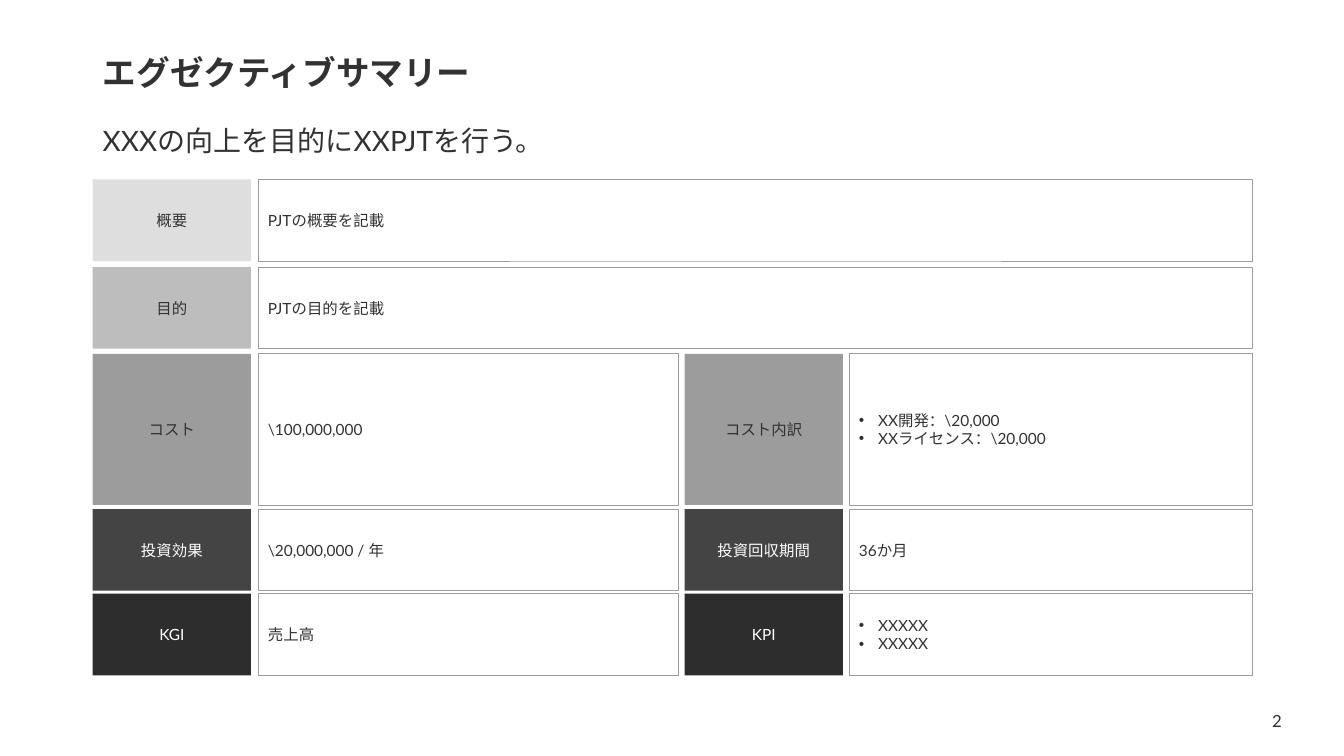
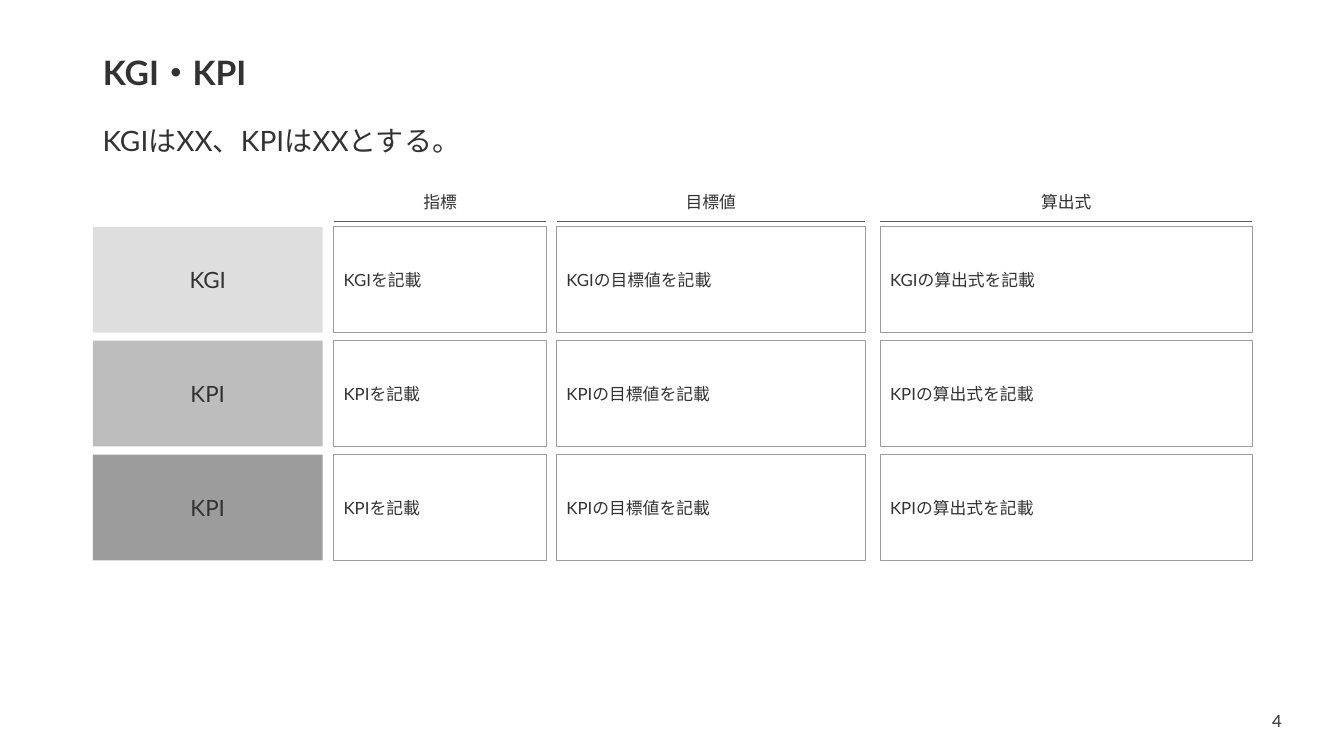
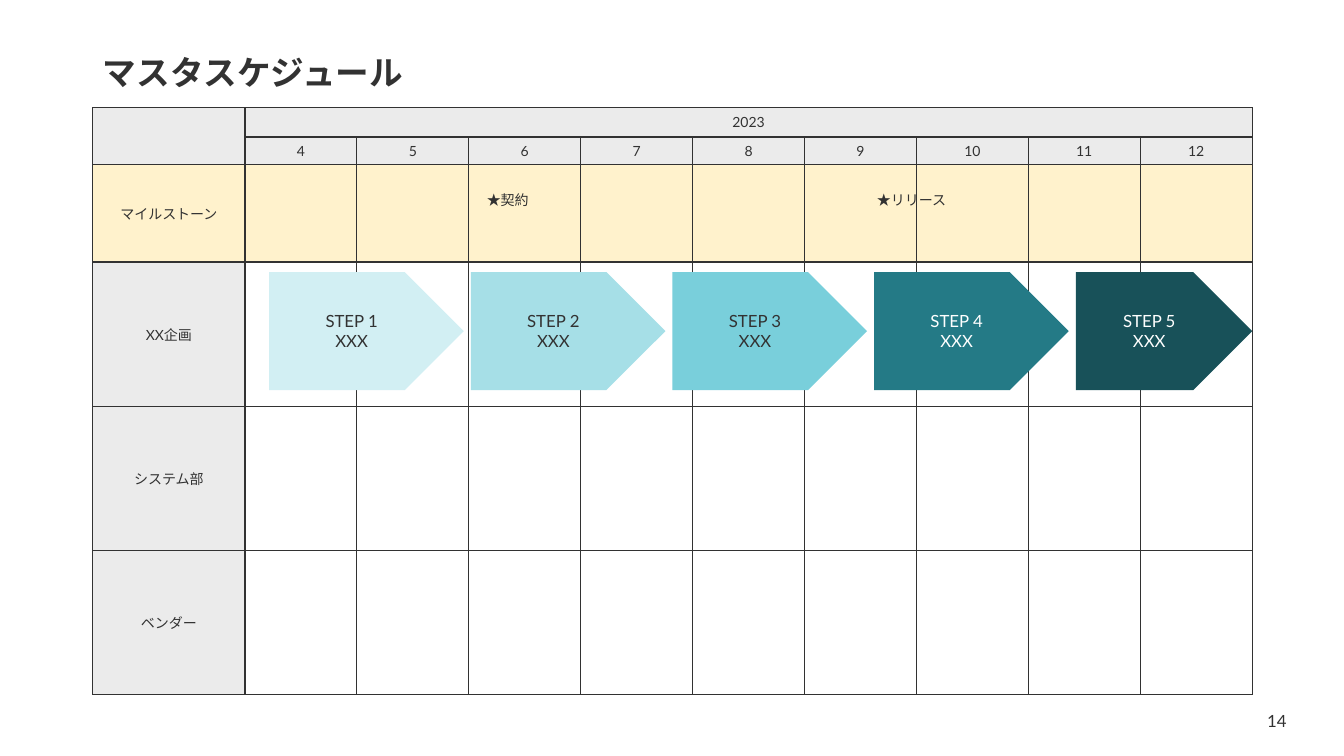
"""Builds three project-planning slides: summary, indicators and master schedule."""
from lxml.etree import SubElement
from pptx import Presentation
from pptx.dml.color import RGBColor
from pptx.enum.shapes import MSO_CONNECTOR, MSO_SHAPE
from pptx.enum.text import MSO_ANCHOR, MSO_AUTO_SIZE, PP_ALIGN
from pptx.oxml.ns import qn
from pptx.util import Pt

PX = 9144
FONT = "Lato"
LEFT, WIDTH = 92, 1150

INK = RGBColor(0x32, 0x32, 0x32)
WHITE = RGBColor(0xFF, 0xFF, 0xFF)
RULE = RGBColor(0x5A, 0x5A, 0x5A)
SILVER = RGBColor(0xDE, 0xDE, 0xDE)
GRAY = RGBColor(0xBD, 0xBD, 0xBD)
STONE = RGBColor(0x9C, 0x9C, 0x9C)
CHARCOAL = RGBColor(0x44, 0x44, 0x44)
BLACK = RGBColor(0x2D, 0x2D, 0x2D)
HEADER = RGBColor(0xEB, 0xEB, 0xEB)
CREAM = RGBColor(0xFF, 0xF2, 0xCC)
TEALS = (
    RGBColor(0xD2, 0xEF, 0xF3),
    RGBColor(0xA6, 0xDF, 0xE7),
    RGBColor(0x79, 0xCF, 0xDB),
    RGBColor(0x24, 0x7A, 0x86),
    RGBColor(0x18, 0x51, 0x59),
)


def emu(*lengths):
    return [length * PX for length in lengths]


class Deck:
    def __init__(self):
        self.presentation = Presentation()
        self.presentation.slide_width, self.presentation.slide_height = emu(1333, 750)
        self.slide = None

    def set_text(self, frame, text, size, color=INK, align=PP_ALIGN.LEFT, bold=False):
        frame.text = text
        frame.word_wrap = True
        frame.vertical_anchor = MSO_ANCHOR.MIDDLE
        for paragraph in frame.paragraphs:
            paragraph.alignment = align
            for run in paragraph.runs:
                run.font.name = FONT
                run.font.size = Pt(size)
                run.font.bold = bold
                run.font.color.rgb = color

    def add_slide(self, title, number, message=None):
        layout = self.presentation.slide_layouts[5]
        self.slide = self.presentation.slides.add_slide(layout)
        placeholder = self.slide.shapes.title
        placeholder.left, placeholder.top, placeholder.width, placeholder.height = emu(
            LEFT, 40, WIDTH, 67)
        frame = placeholder.text_frame
        self.set_text(frame, title, 24, bold=True)
        frame.auto_size = MSO_AUTO_SIZE.NONE
        frame.paragraphs[0].line_spacing = 0.9
        self.text(1242, 695, 49, 40, number, 12, PP_ALIGN.CENTER)
        if message:
            paragraph = self.text(LEFT, 108, WIDTH, 67, message, 20).paragraphs[0]
            paragraph.line_spacing = 0.9
            paragraph.space_before = Pt(10)

    def text(self, left, top, width, height, text, size, align=PP_ALIGN.LEFT):
        shape = self.slide.shapes.add_textbox(*emu(left, top, width, height))
        self.set_text(shape.text_frame, text, size, align=align)
        return shape.text_frame

    def shape(self, kind, left, top, width, height, text, size, align, color=INK):
        shape = self.slide.shapes.add_shape(kind, *emu(left, top, width, height))
        shape.shadow.inherit = False
        self.set_text(shape.text_frame, text, size, color, align)
        return shape

    def label(self, left, top, width, height, text, size, fill, color=INK,
              kind=MSO_SHAPE.RECTANGLE):
        shape = self.shape(kind, left, top, width, height, text, size,
                           PP_ALIGN.CENTER, color)
        shape.fill.solid()
        shape.fill.fore_color.rgb = fill
        shape.line.fill.background()

    def box(self, left, top, width, height, text, size):
        shape = self.shape(MSO_SHAPE.RECTANGLE, left, top, width, height, text, size,
                           PP_ALIGN.LEFT)
        shape.fill.background()
        shape.line.color.rgb = STONE
        shape.line.width = Pt(0.5)
        if "\n" in text:
            self.bullets(shape.text_frame)

    def bullets(self, frame):
        for paragraph in frame.paragraphs:
            properties = paragraph._p.get_or_add_pPr()
            properties.set("marL", str(19 * PX))
            properties.set("indent", str(-19 * PX))
            SubElement(properties, qn("a:buFont"), typeface="Arial")
            SubElement(properties, qn("a:buChar"), char="•")

    def column_header(self, left, width, text):
        self.text(left, 185, width, 30, text, 12, PP_ALIGN.CENTER)
        connector = self.slide.shapes.add_connector(
            MSO_CONNECTOR.STRAIGHT, *emu(left, 220, left + width, 220))
        connector.line.color.rgb = RULE
        connector.line.width = Pt(0.5)
        SubElement(connector._element.spPr, qn("a:effectLst"))

    def table(self, left, top, widths, heights):
        frame = self.slide.shapes.add_table(
            len(heights), len(widths), *emu(left, top, sum(widths), sum(heights)))
        table = frame.table
        table.first_row = table.horz_banding = False
        for column, width in zip(table.columns, emu(*widths)):
            column.width = width
        for row, height in zip(table.rows, emu(*heights)):
            row.height = height
        return table

    def cell(self, cell, text, fill=None):
        self.set_text(cell.text_frame, text, 10, align=PP_ALIGN.CENTER)
        cell.vertical_anchor = MSO_ANCHOR.MIDDLE
        if not text:
            SubElement(cell.text_frame.paragraphs[0]._p, qn("a:endParaRPr"), sz="1000")
        properties = cell._tc.get_or_add_tcPr()
        for side in ("lnL", "lnR", "lnT", "lnB"):
            border = SubElement(properties, qn(f"a:{side}"), w=str(int(Pt(1))))
            solid = SubElement(border, qn("a:solidFill"))
            SubElement(solid, qn("a:srgbClr"), val=str(INK))
        if fill is None:
            cell.fill.background()
        else:
            cell.fill.solid()
            cell.fill.fore_color.rgb = fill


def add_summary(deck):
    deck.add_slide("エグゼクティブサマリー", "2", "XXXの向上を目的にXXPJTを行う。")
    rows = (
        (178, 81, SILVER, INK, (("概要", "PJTの概要を記載"),)),
        (265, 81, GRAY, INK, (("目的", "PJTの目的を記載"),)),
        (351, 150, STONE, INK, (("コスト", "\\100,000,000"),
                                ("コスト内訳", "XX開発：\\20,000\nXXライセンス：\\20,000"))),
        (505, 81, CHARCOAL, WHITE, (("投資効果", "\\20,000,000 / 年"),
                                    ("投資回収期間", "36か月"))),
        (589, 81, BLACK, WHITE, (("KGI", "売上高"), ("KPI", "XXXXX\nXXXXX"))),
    )
    pair_columns = ((LEFT, 256, 417), (679, 842, 400))
    wide_columns = ((LEFT, 256, 986),)
    for top, height, fill, color, entries in rows:
        columns = pair_columns if len(entries) == 2 else wide_columns
        for (label_left, box_left, box_width), (label, text) in zip(columns, entries):
            deck.label(label_left, top, 157, height, label, 11, fill, color)
            deck.box(box_left, top, box_width, height, text, 11)


def add_indicators(deck):
    deck.add_slide("KGI・KPI", "4", "KGIはXX、KPIはXXとする。")
    columns = (
        (331, 211, "指標", ""),
        (552, 306, "目標値", "の目標値"),
        (873, 369, "算出式", "の算出式"),
    )
    for left, width, header, _ in columns:
        deck.column_header(left, width, header)
    for row, (name, fill) in enumerate((("KGI", SILVER), ("KPI", GRAY), ("KPI", STONE))):
        top = 225 + 113 * row
        deck.label(LEFT, top, 228, 105, name, 16, fill)
        for left, width, _, subject in columns:
            deck.box(left, top, width, 105, f"{name}{subject}を記載", 12)


def add_schedule(deck):
    deck.add_slide("マスタスケジュール", "14")
    months = [str(month) for month in range(4, 13)]
    blank = [""] * len(months)
    rows = (
        (["", "2023"] + blank[1:], HEADER, HEADER),
        ([""] + months, HEADER, HEADER),
        (["マイルストーン"] + blank, CREAM, CREAM),
        (["XX企画"] + blank, HEADER, None),
        (["システム部"] + blank, HEADER, None),
        (["ベンダー"] + blank, HEADER, None),
    )
    table = deck.table(LEFT, 107, [151] + [111] * 9, [29, 27, 97, 143, 143, 143])
    for row, (texts, first_fill, fill) in enumerate(rows):
        for column, text in enumerate(texts):
            deck.cell(table.cell(row, column), text, fill if column else first_fill)
    table.cell(0, 0).merge(table.cell(1, 0))
    table.cell(0, 1).merge(table.cell(0, 9))

    for index, fill in enumerate(TEALS):
        left = 267 + 200 * index
        width = min(193, LEFT + WIDTH - left)
        color = INK if index < 3 else WHITE
        deck.label(left, 270, width, 117, f"STEP {index + 1}\nXXX", 12, fill, color,
                   MSO_SHAPE.PENTAGON)
    for left, text in ((860, "★リリース"), (473, "★契約")):
        frame = deck.text(left, 185, 100, 27, text, 10)
        frame.vertical_anchor = MSO_ANCHOR.TOP
        frame.auto_size = MSO_AUTO_SIZE.SHAPE_TO_FIT_TEXT


def main():
    deck = Deck()
    add_summary(deck)
    add_indicators(deck)
    add_schedule(deck)
    deck.presentation.save("out.pptx")


if __name__ == "__main__":
    main()
